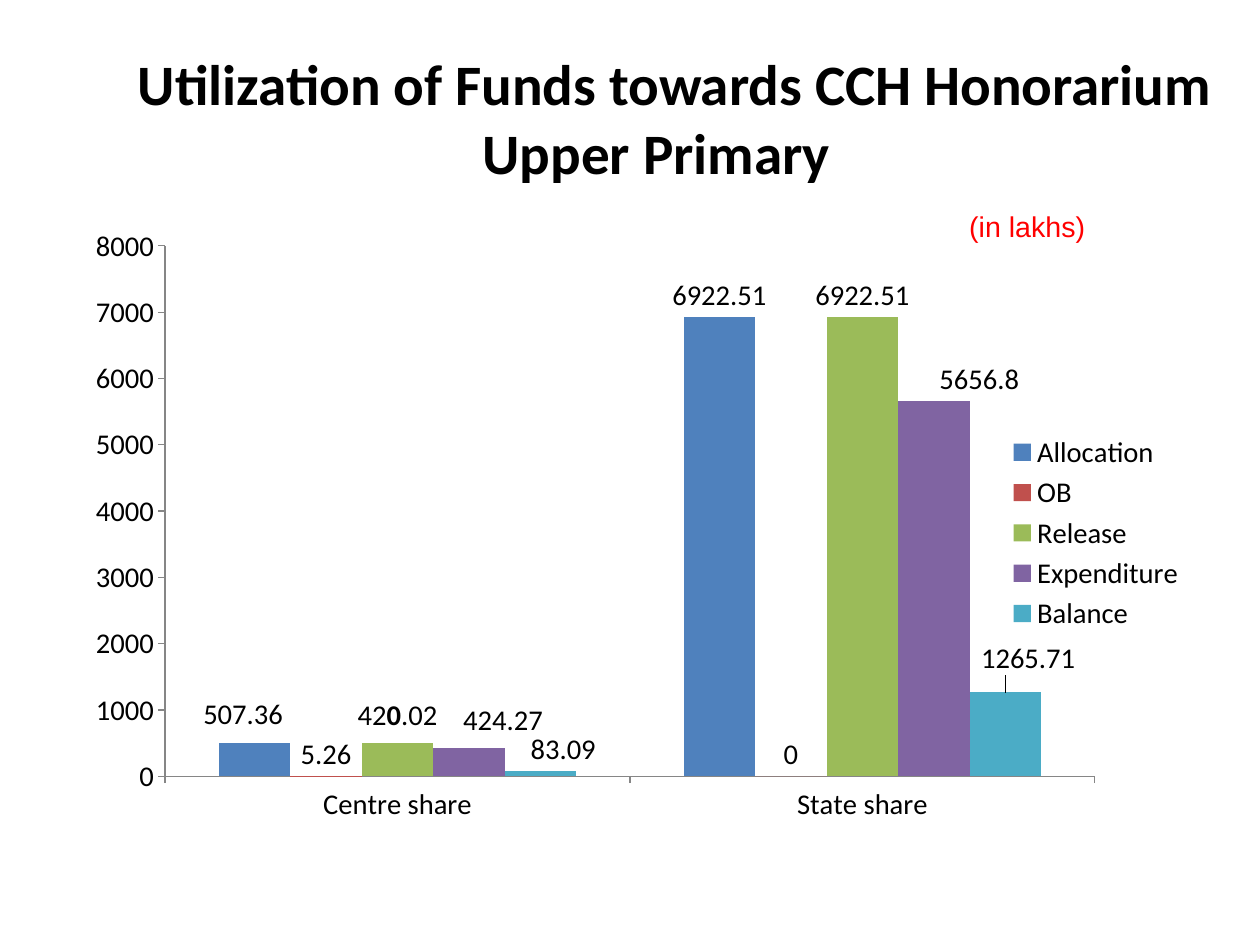
from dataclasses import dataclass

from pptx import Presentation, util as u
from pptx.chart.data import CategoryChartData
from pptx.dml.color import RGBColor
from pptx.enum import chart as ch, text
from pptx.oxml import parse_xml
from pptx.oxml.ns import nsdecls


@dataclass(frozen=True)
class Theme:
    ink: str = "000000"
    note: str = "FF0000"
    axis: str = "868686"
    series: tuple = ("4F81BD", "C0504D", "9BBB59", "8064A2", "4BACC6")
    body: str = "Calibri"
    note_font: str = "Arial"
    title_pt: int = 36
    body_pt: int = 18


def px(n):
    return u.Emu(n * 8000)


def manual_layout(**values):
    parts = "".join(f'<c:{k} val="{v}"/>' for k, v in values.items())
    return parse_xml(f'<c:layout {nsdecls("c")}><c:manualLayout>{parts}'
                     '</c:manualLayout></c:layout>')


class Deck:
    def __init__(self, theme, width, height):
        self.theme = theme
        self.prs = Presentation()
        self.prs.slide_width, self.prs.slide_height = px(width), px(height)
        self.s = self.prs.slides.add_slide(self.prs.slide_layouts[6])

    def style(self, font, size, name, color, bold=False):
        font.size, font.name, font.bold = u.Pt(size), name, bold
        font.color.rgb = RGBColor.from_string(color)

    def text(self, box, words, size, name, color, bold=False, indent=0,
             align=text.PP_ALIGN.LEFT, anchor=text.MSO_ANCHOR.TOP, spacing=1.0):
        tf = self.s.shapes.add_textbox(*map(px, box)).text_frame
        tf.word_wrap = True
        tf.vertical_anchor = anchor
        tf.text = words
        p = tf.paragraphs[0]
        p.alignment, p.line_spacing = align, spacing
        pPr = p._p.get_or_add_pPr()
        pPr.set("marL", "0")
        pPr.set("indent", str(px(indent)))
        self.style(p.runs[0].font, size, name, color, bold)

    def columns(self, box, categories, series, plot_area):
        t = self.theme
        data = CategoryChartData()
        data.categories = categories
        for name, values in series.items():
            data.add_series(name, values)
        chart = self.s.shapes.add_chart(
            ch.XL_CHART_TYPE.COLUMN_CLUSTERED, *map(px, box), data).chart
        self.style(chart.font, t.body_pt, t.body, t.ink)
        chart.has_title = False

        # Legend lies over the right edge of the plot
        chart.has_legend = True
        chart.legend.position = ch.XL_LEGEND_POSITION.RIGHT
        chart.legend.include_in_layout = False

        # Plot area
        area = chart._chartSpace.chart.plotArea
        for old in area.xpath("c:layout"):
            area.remove(old)
        x, y, w, h = plot_area
        area.insert(0, manual_layout(layoutTarget="inner", xMode="edge",
                                     yMode="edge", x=x, y=y, w=w, h=h))

        # Axes
        for axis in (chart.category_axis, chart.value_axis):
            axis.has_major_gridlines = False
            axis.major_tick_mark = ch.XL_TICK_MARK.OUTSIDE
            axis.minor_tick_mark = ch.XL_TICK_MARK.NONE
            axis.format.line.color.rgb = RGBColor.from_string(t.axis)
            axis.format.line.width = u.Pt(0.75)
        axis.minimum_scale, axis.maximum_scale, axis.major_unit = 0, 8000, 1000

        # Columns and their values
        plot = chart.plots[0]
        plot.gap_width, plot.overlap, plot.vary_by_categories = 150, 0, False
        for column, color in zip(plot.series, t.series):
            column.format.fill.solid()
            column.format.fill.fore_color.rgb = RGBColor.from_string(color)
            column.invert_if_negative = False
            labels = column.data_labels
            labels.show_value = True
            labels.position = ch.XL_LABEL_POSITION.OUTSIDE_END
            self.style(labels.font, t.body_pt, t.body, t.ink)
        return chart

    def move_label(self, column, index, dx, dy, pieces=()):
        """Shift one value label; pieces are (words, bold) of a typed label."""
        t = self.theme
        label = column.points[index].data_label
        if pieces:
            p = label.text_frame.paragraphs[0]
            for words, bold in pieces:
                r = p.add_run()
                r.text = words
                self.style(r.font, t.body_pt, t.body, t.ink, bold)
        else:
            self.style(label.font, t.body_pt, t.body, t.ink)
        label.position = ch.XL_LABEL_POSITION.OUTSIDE_END
        dLbl = column._element.xpath(
            f'c:dLbls/c:dLbl[c:idx/@val="{index}"]')[0]
        dLbl.insert(1, manual_layout(x=dx, y=dy))


def main():
    theme = Theme()
    deck = Deck(theme, 1260, 945)

    # Title
    deck.text((87, 38, 1152, 158),
              "Utilization of Funds towards CCH Honorarium Upper Primary ",
              theme.title_pt, theme.body, theme.ink, bold=True, indent=24,
              align=text.PP_ALIGN.CENTER, anchor=text.MSO_ANCHOR.MIDDLE)

    # Funds chart
    funds = {
        "Allocation": (507.36, 6922.51),
        "OB": (5.26, 0),
        "Release": (502.1, 6922.51),
        "Expenditure": (424.27, 5656.8),
        "Balance": (83.09, 1265.71),
    }
    chart = deck.columns((63, 221, 1134, 624), ("Centre share", "State share"),
                         funds, (0.09, 0.04, 0.82, 0.85))

    # Labels moved clear of their neighbours
    allocation, _, release, expenditure, balance = chart.plots[0].series
    deck.move_label(allocation, 0, -0.01, -0.01)
    deck.move_label(release, 0, 0, -0.01,
                    (("42", False), ("0", True), (".02", False)))
    deck.move_label(expenditure, 0, 0.03, -0.01)
    deck.move_label(expenditure, 1, 0.04, 0)
    deck.move_label(balance, 0, 0.02, 0)
    deck.move_label(balance, 1, 0.02, -0.02)

    # Unit note
    deck.text((926, 206, 181, 43), "(in lakhs)", theme.body_pt,
              theme.note_font, theme.note, indent=32, spacing=0.93)

    deck.prs.save("out.pptx")


if __name__ == "__main__":
    main()
